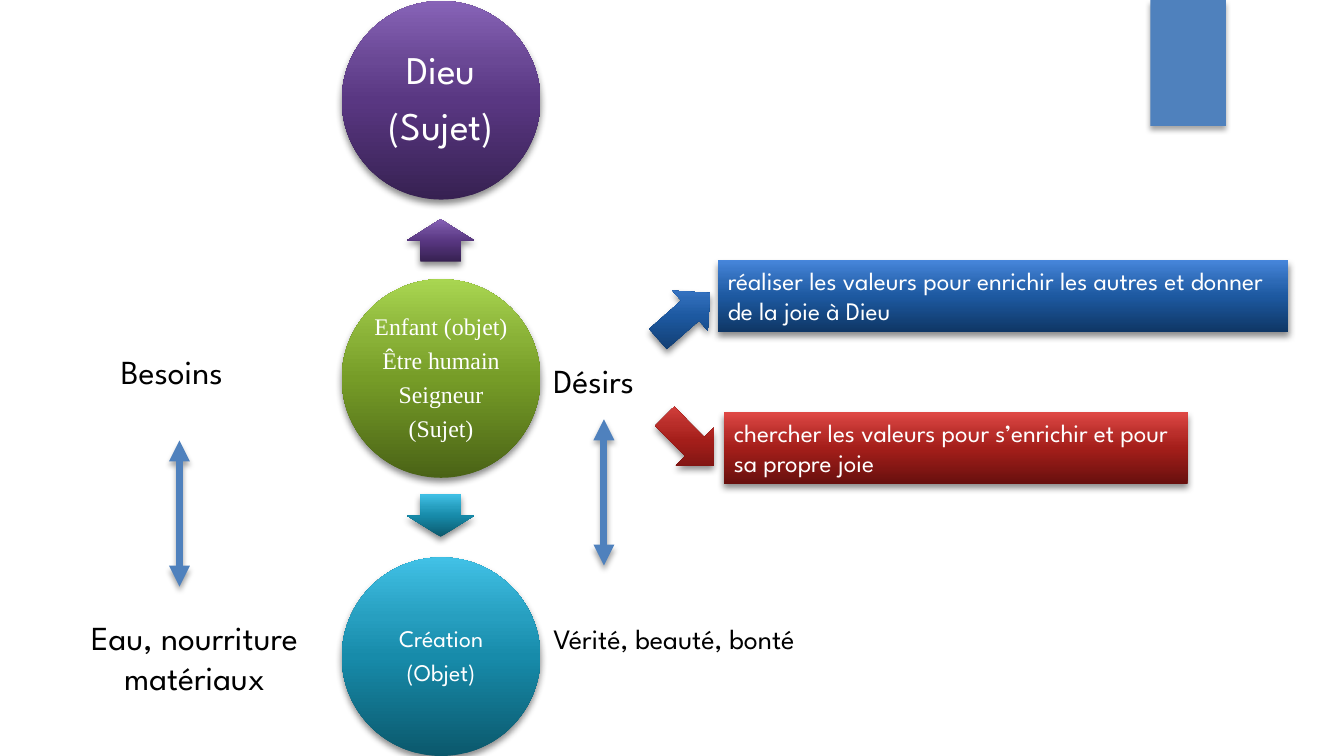
from lxml.etree import SubElement
from pptx import Presentation
from pptx.dml.color import RGBColor
from pptx.enum.shapes import MSO_CONNECTOR, MSO_SHAPE
from pptx.enum.text import MSO_ANCHOR, MSO_AUTO_SIZE, PP_ALIGN
from pptx.oxml.ns import qn
from pptx.util import Inches, Pt

SPARTAN = "League Spartan"
BLUE = "4F81BD"
GRADIENT_STOPS = (0, 50, 70, 100)
PURPLES = ("372152", "593782", "6A4895", "8763B7")
GREENS = ("4A6316", "769C27", "89B137", "A9D651")
TEALS = ("0B586C", "178BAA", "279FC0", "41C1E6")
REDS = ("68100E", "A41E1A", "B92E2A", "DF4845")
BLUES = ("0F3766", "1D59A1", "2D6AB6", "4786DB")
CIRCLE_LEFT, CIRCLE_SIZE, CIRCLE_STEP = 3.39, 1.97, 2.76


def color(value):
    """Turn a hex string into a colour."""
    return RGBColor.from_string(value)


def apply(target, **values):
    """Set every given attribute on the target."""
    for name, value in values.items():
        setattr(target, name, value)


def add_color(parent, value):
    """Append a colour element and return it."""
    return SubElement(parent, qn("a:srgbClr"), val=value)


def add_shadow(shape, opacity, blur):
    """Give a shape or connector a soft shadow falling downwards."""
    effects = SubElement(shape._element.spPr, qn("a:effectLst"))
    shadow = SubElement(effects, qn("a:outerShdw"), blurRad=str(Pt(blur)),
                        dist=str(Pt(3)), dir="5400000", rotWithShape="0")
    SubElement(add_color(shadow, "000000"), qn("a:alpha"), val=str(opacity * 1000))


def fill_gradient(shape, shades):
    """Fill a shape with shades that lighten from bottom to top."""
    shape.fill.gradient()
    gradient = shape._element.spPr.find(qn("a:gradFill"))
    gradient.set("rotWithShape", "0")
    stops = gradient.find(qn("a:gsLst"))
    for stop in list(stops):
        stops.remove(stop)
    for position, shade in zip(GRADIENT_STOPS, shades):
        add_color(SubElement(stops, qn("a:gs"), pos=str(position * 1000)), shade)
    gradient.find(qn("a:lin")).set("ang", "16200000")


def add_gradient_shape(page, kind, frame, shades):
    """Add a shaded shape without outline."""
    shape = page.shapes.add_shape(kind, *map(Inches, frame))
    fill_gradient(shape, shades)
    shape.line.fill.background()
    add_shadow(shape, 45, 5)
    return shape


def write(box, lines, size, ink, font=SPARTAN, **paragraph_format):
    """Write one paragraph per line of text."""
    for index, line in enumerate(lines):
        para = box.paragraphs[0] if index == 0 else box.add_paragraph()
        apply(para, **paragraph_format)
        span = para.add_run()
        span.text = line
        apply(span.font, name=font, size=Pt(size))
        span.font.color.rgb = color(ink)


def add_circle(page, top, shades, lines, size, inset, font=SPARTAN):
    """Add a circle with centred text."""
    frame = (CIRCLE_LEFT, top, CIRCLE_SIZE, CIRCLE_SIZE)
    box = add_gradient_shape(page, MSO_SHAPE.OVAL, frame, shades).text_frame
    sides = ("margin_left", "margin_top", "margin_right", "margin_bottom")
    apply(box, word_wrap=True, vertical_anchor=MSO_ANCHOR.MIDDLE,
          **dict.fromkeys(sides, Inches(inset)))
    write(box, lines, size, "FFFFFF", font, alignment=PP_ALIGN.CENTER,
          line_spacing=0.9, space_after=Pt(size * 0.35))


def add_block_arrow(page, frame, rotation, shades, shaft=0.5):
    """Add a turned block arrow."""
    arrow = add_gradient_shape(page, MSO_SHAPE.RIGHT_ARROW, frame, shades)
    arrow.rotation = rotation
    arrow.adjustments[0] = shaft


def add_banner(page, frame, shades, text):
    """Add a shaded rectangle with left-aligned text."""
    box = add_gradient_shape(page, MSO_SHAPE.RECTANGLE, frame, shades).text_frame
    apply(box, word_wrap=True, vertical_anchor=MSO_ANCHOR.TOP,
          auto_size=MSO_AUTO_SIZE.SHAPE_TO_FIT_TEXT)
    write(box, [text], 18, "FFFFFF", alignment=PP_ALIGN.LEFT)


def add_label(page, frame, lines, size=24, alignment=PP_ALIGN.LEFT):
    """Add a plain text label."""
    box = page.shapes.add_textbox(*map(Inches, frame)).text_frame
    apply(box, word_wrap=False, auto_size=MSO_AUTO_SIZE.SHAPE_TO_FIT_TEXT)
    write(box, lines, size, "000000", alignment=alignment)


def add_double_arrow(page, x, top):
    """Add a vertical line with an arrowhead at both ends."""
    ends = map(Inches, (x, top, x, top + 1.45))
    arrow = page.shapes.add_connector(MSO_CONNECTOR.STRAIGHT, *ends)
    arrow.line.width = Pt(5)
    arrow.line.color.rgb = color(BLUE)
    for end in ("a:headEnd", "a:tailEnd"):
        SubElement(arrow.line._get_or_add_ln(), qn(end), type="triangle")
    add_shadow(arrow, 35, 4)


def add_tab(page):
    """Add the plain blue tab at the top edge."""
    frame = map(Inches, (11.41, 0, 0.75, 1.25))
    tab = page.shapes.add_shape(MSO_SHAPE.RECTANGLE, *frame)
    tab.fill.solid()
    tab.fill.fore_color.rgb = color(BLUE)
    tab.line.fill.background()
    add_shadow(tab, 35, 4)


def main():
    """Build the slide and save it."""
    deck = Presentation()
    apply(deck, slide_width=Inches(13.33), slide_height=Inches(7.5))
    page = deck.slides.add_slide(deck.slide_layouts[6])

    add_tab(page)
    circles = (
        (PURPLES, ["Dieu", "(Sujet)"], 28, 0.04, SPARTAN),
        (GREENS, ["Enfant (objet)", "Être humain", "Seigneur", "(Sujet)"],
         17, 0.02, "Times New Roman"),
        (TEALS, ["Création", "(Objet)"], 17, 0.02, SPARTAN),
    )
    for index, circle in enumerate(circles):
        add_circle(page, 0.01 + index * CIRCLE_STEP, *circle)
    add_block_arrow(page, (4.16, 2.05, 0.42, 0.67), 270, PURPLES, 0.6)
    add_block_arrow(page, (4.16, 4.78, 0.42, 0.67), 90, TEALS, 0.6)

    add_label(page, (1.1, 3.43, 1.37, 0.5), ["Besoins"])
    add_label(page, (0.66, 6.07, 2.54, 0.91), ["Eau, nourriture", "matériaux"],
              alignment=PP_ALIGN.CENTER)
    add_label(page, (5.39, 6.12, 3.14, 0.44), ["Vérité, beauté, bonté"], 20)
    add_label(page, (5.39, 3.52, 1.2, 0.5), ["Désirs"])

    add_banner(page, (7.18, 4.09, 4.6, 0.71), REDS,
               "chercher les valeurs pour s’enrichir et pour sa propre joie")
    add_banner(page, (7.12, 2.58, 5.66, 0.71), BLUES,
               "réaliser les valeurs pour enrichir les autres et donner de la joie à Dieu")
    add_block_arrow(page, (6.44, 2.87, 0.69, 0.53), 318.6, BLUES)
    add_block_arrow(page, (6.49, 4.11, 0.69, 0.53), 45.3, REDS)
    add_double_arrow(page, 1.78, 4.37)
    add_double_arrow(page, 5.99, 4.16)

    deck.save("out.pptx")


if __name__ == "__main__":
    main()
